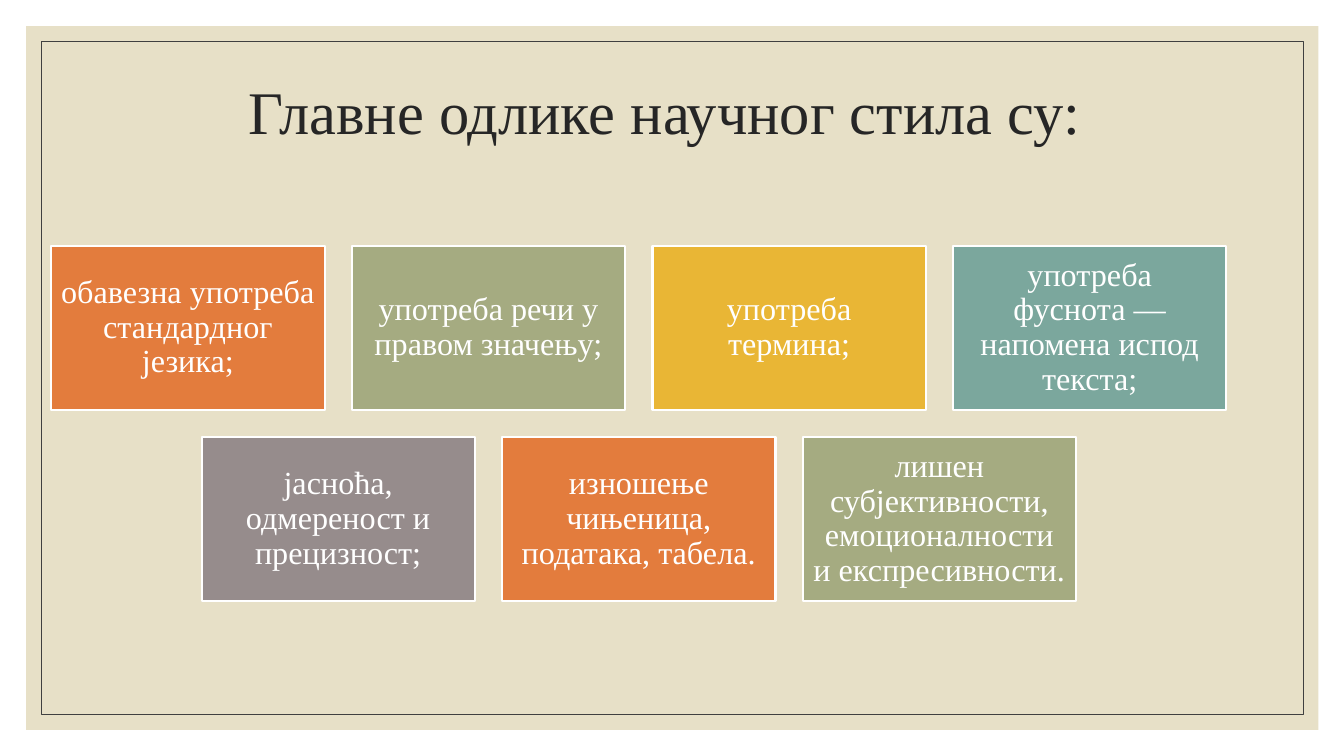
from pptx import Presentation
from pptx.dml.color import RGBColor
from pptx.enum import shapes, text
from pptx.util import Pt

SAND = RGBColor(0xE7, 0xE0, 0xC7)
FRAME = RGBColor(0x40, 0x40, 0x40)
INK = RGBColor(0x26, 0x26, 0x26)
WHITE = RGBColor(0xFF, 0xFF, 0xFF)
ORANGE = RGBColor(0xE3, 0x7C, 0x3D)
GREEN = RGBColor(0xA5, 0xAB, 0x81)
YELLOW = RGBColor(0xE9, 0xB6, 0x35)
TEAL = RGBColor(0x7B, 0xA7, 0x9D)
GREY = RGBColor(0x96, 0x8C, 0x8C)

FONT = "Times New Roman"
CARD_WIDTH = 195.2
CARD_HEIGHT = 0.6 * CARD_WIDTH
GAP = 0.1 * CARD_WIDTH
CARDS_LEFT, CARDS_TOP = 36.7, 175.6

ROWS = [
    [
        ("обавезна употреба стандардног језика;", ORANGE),
        ("употреба речи у правом значењу;", GREEN),
        ("употреба термина;", YELLOW),
        ("употреба фуснота\u00a0— напомена испод текста;", TEAL),
    ],
    [
        ("јасноћа, одмереност и прецизност;", GREY),
        ("изношење чињеница, података, табела.", ORANGE),
        ("лишен субјективности, емоционалности и експресивности.", GREEN),
    ],
]


def add_rectangle(left, top, width, height, fill=None, line=None, weight=0):
    box = page.shapes.add_shape(
        shapes.MSO_SHAPE.RECTANGLE, Pt(left), Pt(top), Pt(width), Pt(height))
    box.shadow.inherit = False
    if fill is None:
        box.fill.background()
    else:
        box.fill.solid()
        box.fill.fore_color.rgb = fill
    if line is None:
        box.line.fill.background()
    else:
        box.line.color.rgb = line
        box.line.width = Pt(weight)
    return box


def write_centred(box, words, size, color):
    frame = box.text_frame
    frame.word_wrap = True
    frame.vertical_anchor = text.MSO_ANCHOR.MIDDLE
    para = frame.paragraphs[0]
    para.text = words
    para.alignment = text.PP_ALIGN.CENTER
    para.line_spacing = 0.9
    para.font.name = FONT
    para.font.size = Pt(size)
    para.font.color.rgb = color
    return frame


deck = Presentation()
deck.slide_width, deck.slide_height = Pt(960), Pt(540)
page = deck.slides.add_slide(deck.slide_layouts[6])

add_rectangle(18.7, 18.7, 923, 502.6, fill=SAND)
add_rectangle(29.5, 29.5, 901.4, 481, line=FRAME, weight=0.5)

title = page.shapes.add_textbox(Pt(84.2), Pt(50.4), Pt(792), Pt(108))
title_frame = write_centred(title, "Главне одлике научног стила су:", 43.2, INK)
title_frame.margin_right = Pt(18)
title_frame.margin_bottom = Pt(48)

for row, cards in enumerate(ROWS):
    indent = (len(ROWS[0]) - len(cards)) * (CARD_WIDTH + GAP) / 2
    top = CARDS_TOP + row * (CARD_HEIGHT + GAP)
    for column, (words, color) in enumerate(cards):
        left = CARDS_LEFT + indent + column * (CARD_WIDTH + GAP)
        card = add_rectangle(left, top, CARD_WIDTH, CARD_HEIGHT, color, WHITE, 1.5)
        card_frame = write_centred(card, words, 23, WHITE)
        card_frame.margin_left = card_frame.margin_right = Pt(6.9)
        card_frame.margin_top = card_frame.margin_bottom = Pt(6.9)

deck.save("out.pptx")
